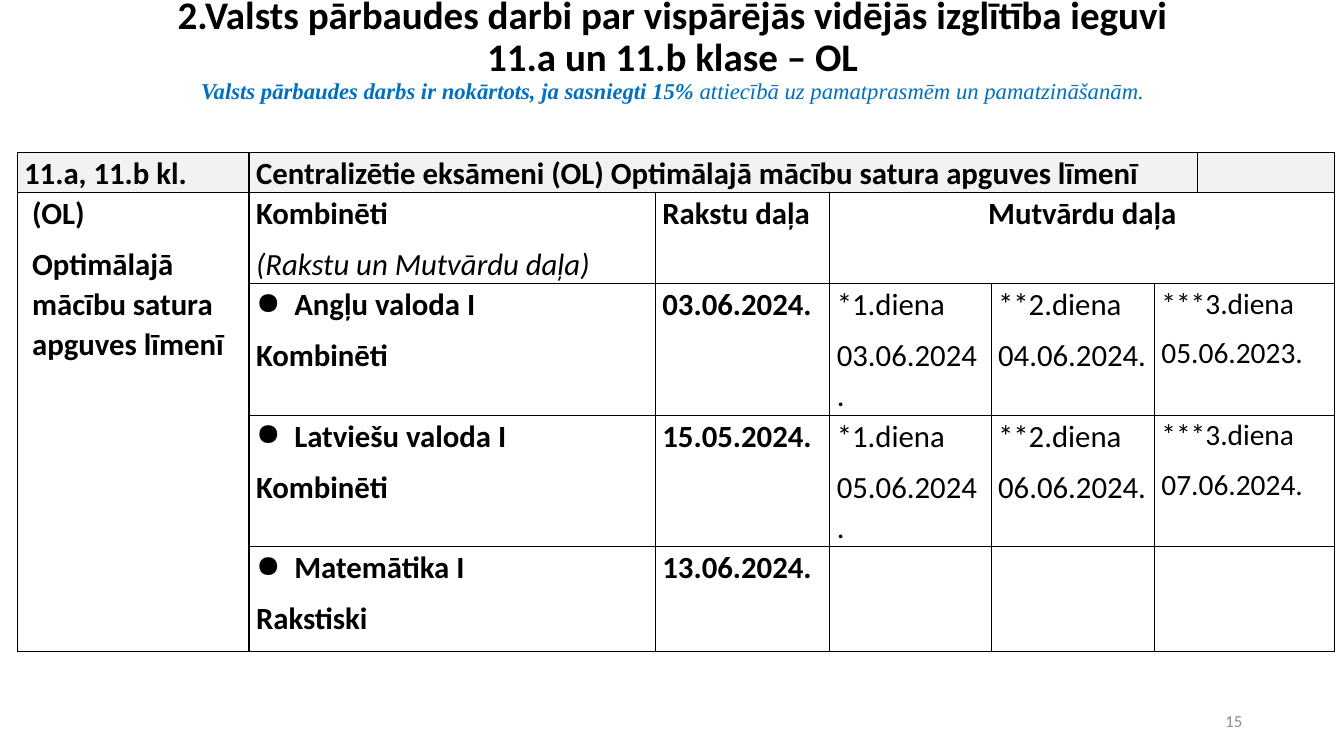
import pptx
import pptx.dml.color
import pptx.enum.text
import pptx.oxml
import pptx.util
from pptx.util import Inches

BLACK = pptx.dml.color.RGBColor(0x00, 0x00, 0x00)
BLUE = pptx.dml.color.RGBColor(0x00, 0x70, 0xC0)
GREY = pptx.dml.color.RGBColor(0x8C, 0x8C, 0x8C)
HEADER_FILL = pptx.dml.color.RGBColor(0xF2, 0xF2, 0xF2)
ALIGN = pptx.enum.text.PP_ALIGN
ANCHOR = pptx.enum.text.MSO_ANCHOR
NAMESPACE = 'xmlns:a="http://schemas.openxmlformats.org/drawingml/2006/main"'

COLUMN_WIDTHS = [2.3, 4.03, 1.73, 1.6, 1.62, 0.43, 1.36]
ROW_HEIGHTS = [0.38, 0.38, 1.04, 1.04, 1.04]
MERGES = [((0, 1), (0, 5)), ((1, 0), (4, 0)), ((1, 3), (1, 6))]
MERGES += [((row, 5), (row, 6)) for row in (2, 3, 4)]
EXAMS = [
    ("Angļu valoda I", "Kombinēti", "03.06.2024.",
     ["03.06.2024.", "04.06.2024.", "05.06.2023."]),
    ("Latviešu valoda I", "Kombinēti", "15.05.2024.",
     ["05.06.2024.", "06.06.2024.", "07.06.2024."]),
    ("Matemātika I", "Rakstiski", "13.06.2024.", []),
]


def add_span(para, text, size=22, font="Calibri", color=BLACK, bold=False, italic=False):
    span = para.add_run()
    span.text = text
    span.font.size = pptx.util.Pt(size)
    span.font.name = font
    span.font.color.rgb = color
    span.font.bold = bold
    span.font.italic = italic


def write_cell(cell, lines, align=ALIGN.LEFT, indent=0, bullet=False, **first_format):
    for index, (text, text_format) in enumerate(lines):
        frame = cell.text_frame
        para = frame.add_paragraph() if index else frame.paragraphs[0]
        para.alignment = align
        para.line_spacing = 1.07
        para.space_after = pptx.util.Pt(8)
        properties = para._p.get_or_add_pPr()
        if indent:
            properties.set("marL", str(Inches(indent)))
        if bullet and index == 0:
            properties.set("marL", str(Inches(0.38)))
            properties.set("indent", str(Inches(-0.38)))
            properties.append(pptx.oxml.parse_xml(f'<a:buChar {NAMESPACE} char="●"/>'))
        add_span(para, text, **text_format)


def style_cell(cell, filled):
    cell.margin_left = cell.margin_right = Inches(0.07)
    cell.margin_top = cell.margin_bottom = 0
    properties = cell._tc.get_or_add_tcPr()
    for side in ("lnL", "lnR", "lnT", "lnB"):
        properties.append(pptx.oxml.parse_xml(
            f'<a:{side} {NAMESPACE} w="12700"><a:solidFill>'
            f'<a:srgbClr val="{BLACK}"/></a:solidFill></a:{side}>'))
    if filled:
        cell.fill.solid()
        cell.fill.fore_color.rgb = HEADER_FILL
    else:
        cell.fill.background()


def place_title(page, left, top, width, height):
    title = page.shapes.title
    title.left, title.top = Inches(left), Inches(top)
    title.width, title.height = Inches(width), Inches(height)
    frame = title.text_frame
    frame.auto_size = pptx.enum.text.MSO_AUTO_SIZE.NONE
    frame.vertical_anchor = ANCHOR.MIDDLE
    frame.margin_bottom = Inches(1.31)
    para = frame.paragraphs[0]
    para.alignment = ALIGN.CENTER
    para.line_spacing = 0.9
    for line in ("2.Valsts pārbaudes darbi par vispārējās vidējās izglītība ieguvi",
                 "11.a un 11.b klase – OL"):
        add_span(para, line, size=27.9, bold=True)
        para.add_line_break()
    note = dict(size=16.2, font="Times New Roman", color=BLUE, italic=True)
    add_span(para, "Valsts pārbaudes darbs ir nokārtots, ja sasniegti 15% ", bold=True, **note)
    add_span(para, "attiecībā uz pamatprasmēm un pamatzināšanām.", **note)


def place_exam_table(page, left, top, width, height):
    frame = page.shapes.add_table(len(ROW_HEIGHTS), len(COLUMN_WIDTHS), Inches(left),
                                  Inches(top), Inches(width), Inches(height))
    table = frame.table
    table.first_row = table.horz_banding = False
    for column, column_width in zip(table.columns, COLUMN_WIDTHS):
        column.width = Inches(column_width)
    for row_index, (row, row_height) in enumerate(zip(table.rows, ROW_HEIGHTS)):
        row.height = Inches(row_height)
        for cell in row.cells:
            style_cell(cell, row_index == 0)
    for first, last in MERGES:
        table.cell(*first).merge(table.cell(*last))

    bold = dict(bold=True)
    write_cell(table.cell(0, 0), [("11.a, 11.b kl.", bold)])
    write_cell(table.cell(0, 1), [
        ("Centralizētie eksāmeni (OL) Optimālajā mācību satura apguves līmenī", bold)])
    write_cell(table.cell(1, 0), [
        ("(OL)", bold), ("Optimālajā mācību satura apguves līmenī", bold)], indent=0.08)
    write_cell(table.cell(1, 1), [
        ("Kombinēti", bold), ("(Rakstu un Mutvārdu daļa)", dict(italic=True))])
    write_cell(table.cell(1, 2), [("Rakstu daļa", bold)])
    write_cell(table.cell(1, 3), [("Mutvārdu daļa", bold)], align=ALIGN.CENTER)
    for row, (subject, form, written, oral_dates) in enumerate(EXAMS, start=2):
        write_cell(table.cell(row, 1), [(subject, bold), (form, bold)], bullet=True)
        write_cell(table.cell(row, 2), [(written, bold)])
        for day, date in enumerate(oral_dates, start=1):
            plain = dict(size=21 if day == 3 else 22)
            write_cell(table.cell(row, 2 + day),
                       [("*" * day + f"{day}.diena", plain), (date, plain)])


def place_page_number(page, left, top, width, height):
    box = page.shapes.add_textbox(Inches(left), Inches(top), Inches(width), Inches(height))
    box.text_frame.word_wrap = True
    box.text_frame.vertical_anchor = ANCHOR.MIDDLE
    para = box.text_frame.paragraphs[0]
    para.alignment = ALIGN.RIGHT
    add_span(para, "15", size=12, color=GREY)


def main():
    deck = pptx.Presentation()
    deck.slide_width, deck.slide_height = Inches(13.33), Inches(7.5)
    page = deck.slides.add_slide(deck.slide_layouts[5])
    place_title(page, 0.92, 0.4, 11.5, 1.45)
    place_exam_table(page, 0.17, 1.51, sum(COLUMN_WIDTHS), sum(ROW_HEIGHTS))
    place_page_number(page, 9.42, 6.95, 3, 0.4)
    deck.save("out.pptx")


if __name__ == "__main__":
    main()
